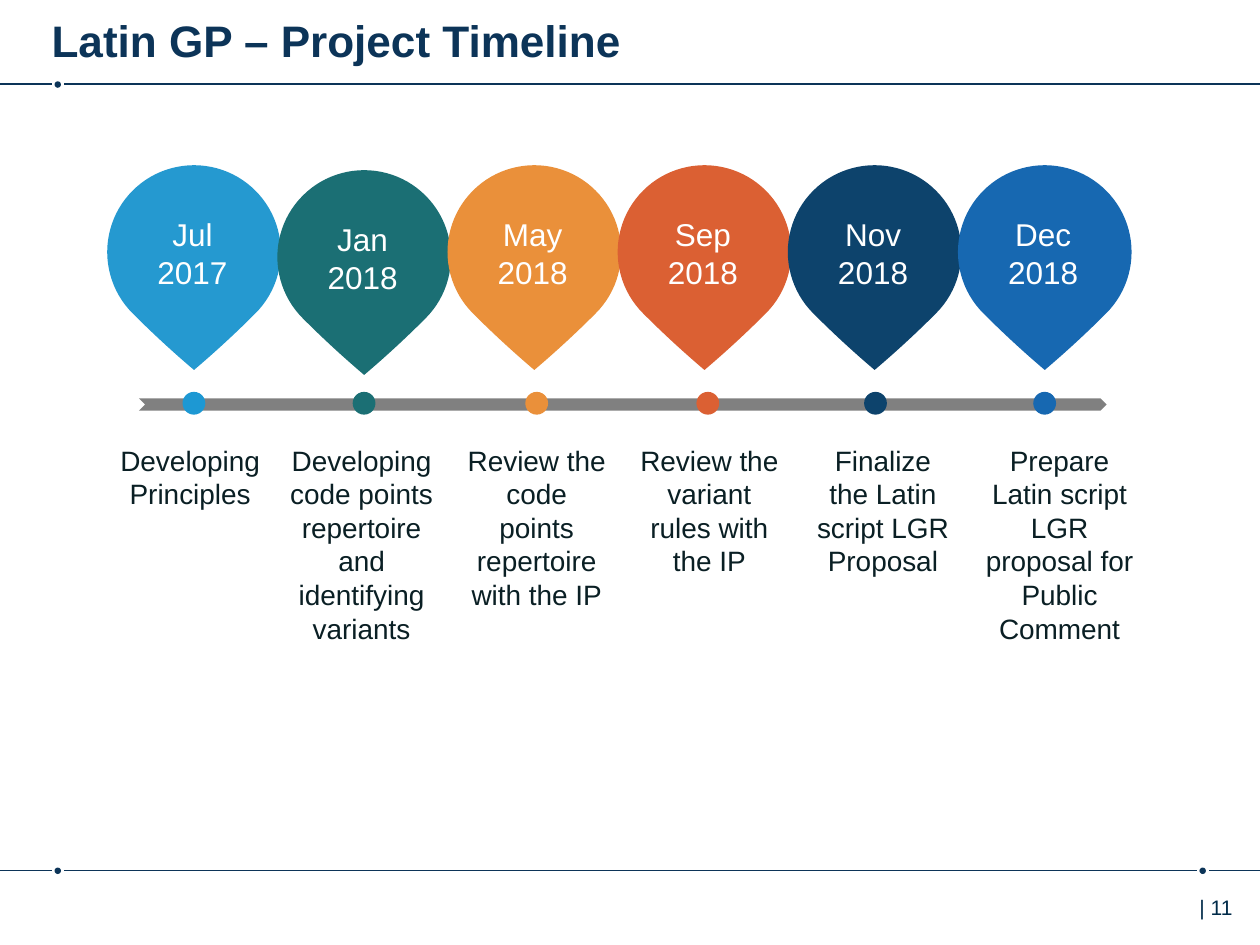
from lxml import etree
from pptx import Presentation
from pptx.dml.color import RGBColor
from pptx.enum.shapes import MSO_CONNECTOR, MSO_SHAPE
from pptx.enum.text import MSO_ANCHOR, PP_ALIGN
from pptx.oxml.ns import qn
from pptx.util import Cm, Pt

OVAL, TEARDROP, CHEVRON = MSO_SHAPE.OVAL, MSO_SHAPE.TEAR, MSO_SHAPE.CHEVRON
STRAIGHT = MSO_CONNECTOR.STRAIGHT
LEFT, CENTER = PP_ALIGN.LEFT, PP_ALIGN.CENTER
TOP, MIDDLE = MSO_ANCHOR.TOP, MSO_ANCHOR.MIDDLE
NAVY, INK, GREY, WHITE = "0C3458", "0A1F24", "808080", "FFFFFF"
PAGE_W, PAGE_H = 25.4, 19.05
PITCH, PIN, DOT = 3.43, 3.5, 0.46

# month, year, colour, dot colour, pin drop, dot shift, caption shift, width, lines, caption
MILESTONES = [
    ("Jul", "2017", "2599D0", "1D98D3", 0, 0, -0.05, 3.45, 2,
     "Developing Principles"),
    ("Jan", "2018", "1B6F74", "1B6F74", 0.1, 0, -0.05, 3.5, 6,
     "Developing code points repertoire and identifying variants"),
    ("May", "2018", "EA903A", "EA903A", 0, 0.05, 0.15, 3.3, 5,
     "Review the code points repertoire with the IP"),
    ("Sep", "2018", "DB6033", "DB6033", 0, 0.07, 0.2, 3.3, 4,
     "Review the variant rules with the IP"),
    ("Nov", "2018", "0D436C", "0D436C", 0, 0.02, 0.27, 3.3, 4,
     "Finalize the Latin script LGR Proposal"),
    ("Dec", "2018", "1768B1", "1768B1", 0, 0, 0.12, 3.86, 6,
     "Prepare Latin script LGR proposal for Public Comment"),
]


def rgb(value):
    return RGBColor.from_string(value)


def add_solid(shapes, kind, x, y, w, h, color):
    sp = shapes.add_shape(kind, Cm(x), Cm(y), Cm(w), Cm(h))
    sp.shadow.inherit = False
    sp.fill.solid()
    sp.fill.fore_color.rgb = rgb(color)
    sp.line.fill.background()
    return sp


def add_line(shapes, x1, x2, y):
    line = shapes.add_connector(STRAIGHT, Cm(x1), Cm(y), Cm(x2), Cm(y))
    line.line.color.rgb = rgb(NAVY)
    line.line.width = Pt(1)
    etree.SubElement(line._element.spPr, qn("a:effectLst"))


def write(tf, lines, size, color, align=CENTER, bold=False):
    tf.word_wrap = True
    for i, text in enumerate(lines):
        p = tf.paragraphs[0] if i == 0 else tf.add_paragraph()
        p.alignment = align
        r = p.add_run()
        r.text = text
        r.font.name = "Arial"
        r.font.size = Pt(size)
        r.font.bold = bold
        r.font.color.rgb = rgb(color)


def add_text(shapes, x, y, w, h, lines, size, color, align=CENTER):
    box = shapes.add_textbox(Cm(x), Cm(y), Cm(w), Cm(h))
    write(box.text_frame, lines, size, color, align)
    return box


def add_rule(shapes, y, dots):
    start = 0
    for x in dots:
        add_solid(shapes, OVAL, x - 0.06, y - 0.06, 0.13, 0.13, NAVY)
        add_line(shapes, start, x - 0.12, y)
        start = x + 0.14
    add_line(shapes, start, PAGE_W, y)


def add_title(s, x, y, w, h, text):
    title = s.shapes.title
    title.left, title.top, title.width, title.height = Cm(x), Cm(y), Cm(w), Cm(h)
    tf = title.text_frame
    tf.margin_left = tf.margin_right = tf.margin_bottom = 0
    tf.vertical_anchor = MIDDLE
    write(tf, [text], 25.2, NAVY, LEFT, True)


def add_page_number(shapes, x, y, w, h, text):
    tf = add_text(shapes, x, y, w, h, [text], 12, "002B49", LEFT).text_frame
    tf.margin_left = tf.margin_right = 0
    tf.vertical_anchor = TOP


def add_pin(shapes, x, y, lines, color):
    group = shapes.add_group_shape().shapes
    pin = add_solid(group, TEARDROP, x, y, PIN, PIN, color)
    pin.adjustments[0] = 0.961
    pin.rotation = 135
    add_text(group, x + 0.07, y + 0.89, 3.3, 1.8, lines, 18, WHITE)


def add_timeline(shapes, x, y):
    add_solid(shapes, CHEVRON, x + 0.64, y + 4.7, 19.51, 0.25, GREY)
    for i, (month, year, color, dot_color, drop, dot_dx,
            text_dx, text_w, rows, caption) in enumerate(MILESTONES):
        left = x + i * PITCH
        add_pin(shapes, left, y + drop, [month, year], color)
        add_solid(shapes, OVAL, left + (PIN - DOT) / 2 + dot_dx, y + 4.57,
                  DOT, DOT, dot_color)
        add_text(shapes, left + text_dx, y + 5.48, text_w,
                 0.25 + 0.69 * rows, [caption], 16, INK)


def main():
    prs = Presentation()
    prs.slide_width, prs.slide_height = Cm(PAGE_W), Cm(PAGE_H)
    s = prs.slides.add_slide(prs.slide_layouts[5])
    add_rule(s.shapes, 1.7, [1.16])
    add_rule(s.shapes, 17.55, [1.16, 24.24])
    add_page_number(s.shapes, 24.18, 17.91, 1.1, 1, "| 11")
    add_title(s, 1.04, 0.13, 22.25, 1.24, "Latin GP – Project Timeline")
    add_timeline(s.shapes, 2.16, 3.33)
    prs.save("out.pptx")


if __name__ == "__main__":
    main()
